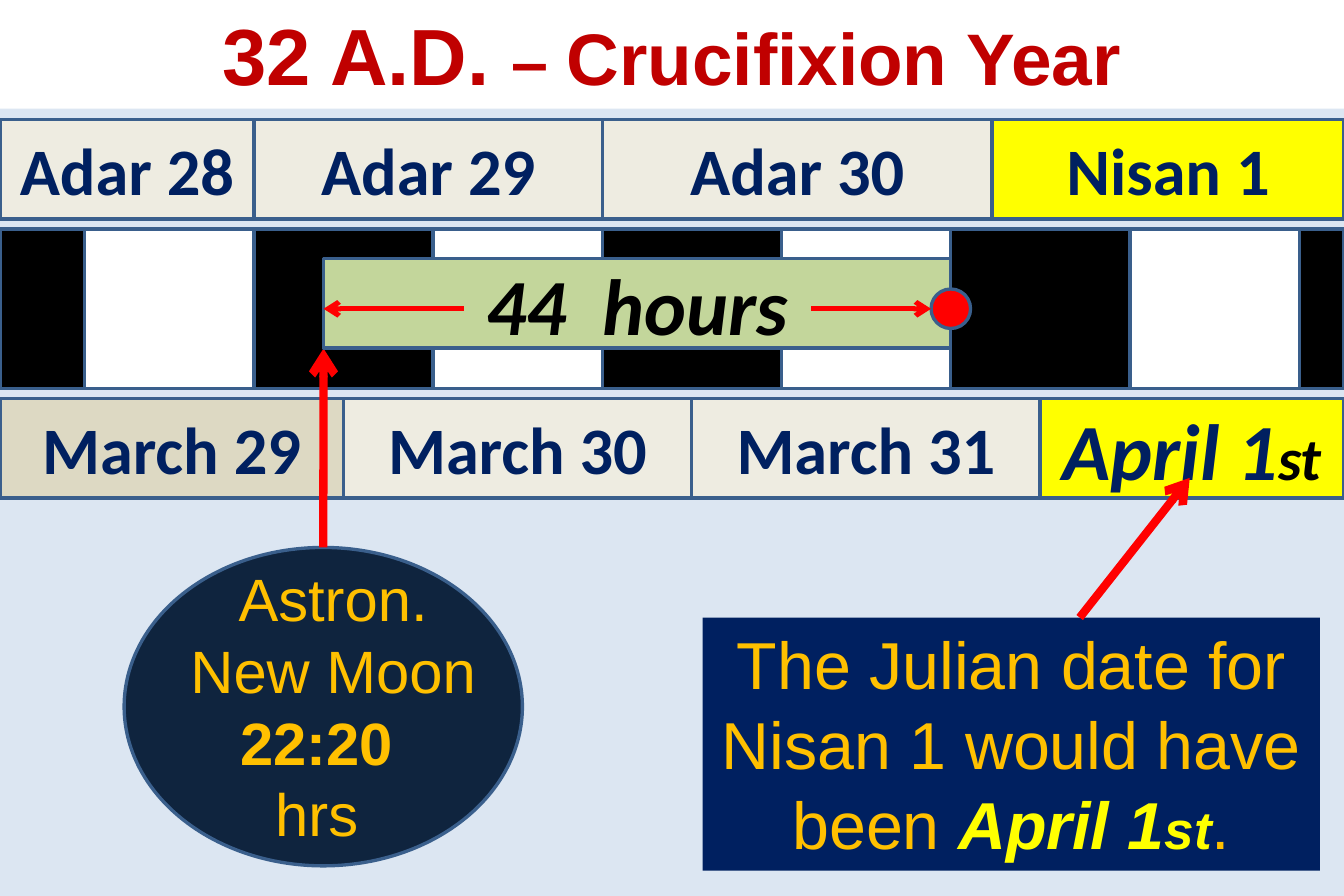
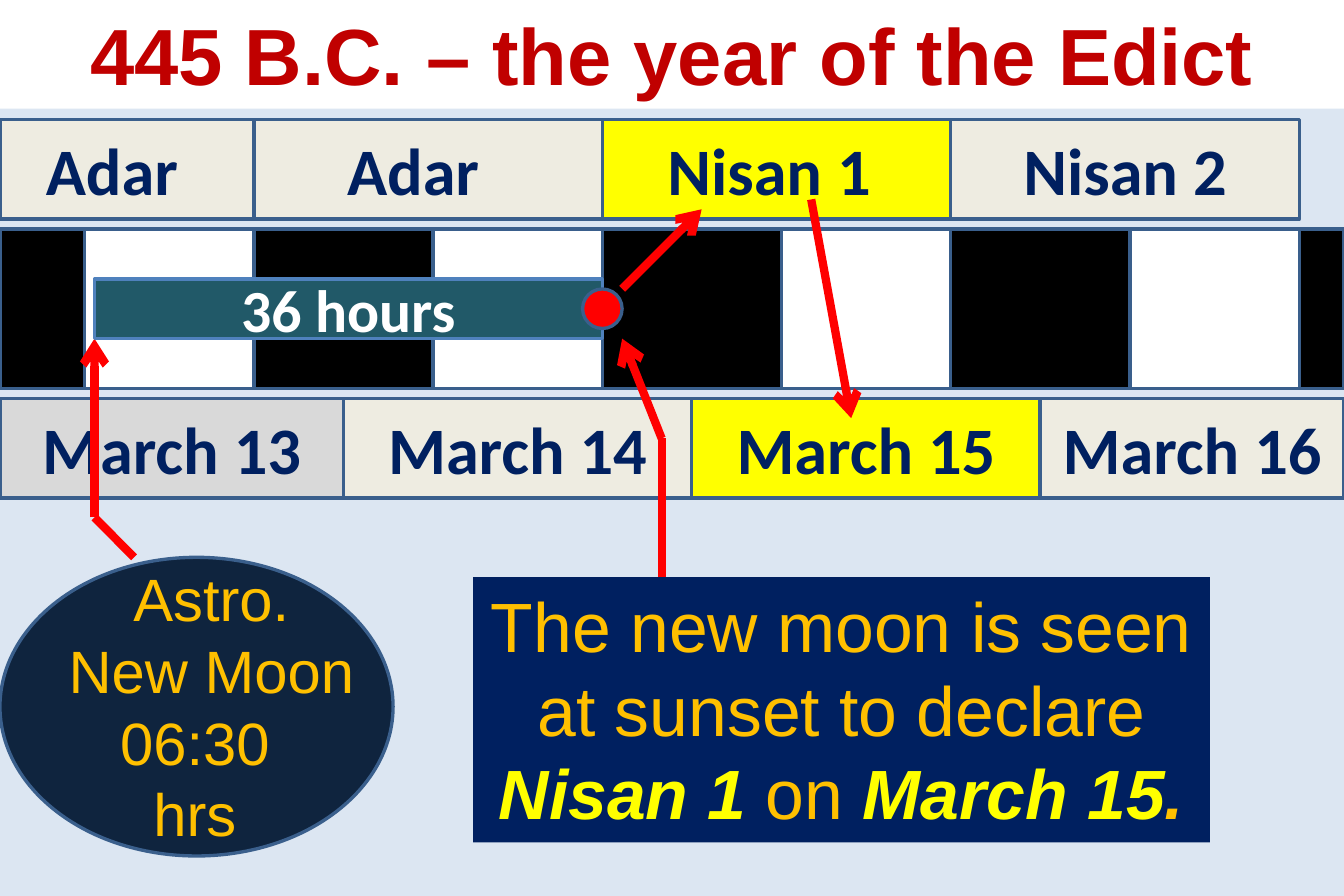
from collections import namedtuple
from itertools import pairwise

from lxml.etree import SubElement
from pptx import Presentation
from pptx.dml.color import RGBColor
from pptx.enum.shapes import MSO_CONNECTOR as Link, MSO_SHAPE as Preset
from pptx.enum.text import MSO_ANCHOR as Anchor, PP_ALIGN as Align
from pptx.oxml.ns import qn
from pptx.util import Cm, Pt

# Shared colours
SKY = RGBColor(0xDC, 0xE6, 0xF2)
WHITE = RGBColor(0xFF, 0xFF, 0xFF)
BLACK = RGBColor(0, 0, 0)
OUTLINE = RGBColor(0x3A, 0x5F, 0x8C)
BLUE = RGBColor(0x4F, 0x81, 0xBD)
IVORY = RGBColor(0xEE, 0xEC, 0xE1)
SAND = RGBColor(0xDD, 0xD9, 0xC3)
GREY = RGBColor(0xD9, 0xD9, 0xD9)
YELLOW = RGBColor(0xFF, 0xFF, 0)
NAVY = RGBColor(0, 0x20, 0x60)
NIGHT_BLUE = RGBColor(0x0F, 0x24, 0x3E)
GOLD = RGBColor(0xFF, 0xC0, 0)
CRIMSON = RGBColor(0xC0, 0, 0)
RED = RGBColor(0xFF, 0, 0)
GREEN = RGBColor(0xC3, 0xD6, 0x9B)
TEAL = RGBColor(0x21, 0x59, 0x68)

Box = namedtuple("Box", "left top width height")
Span = namedtuple("Span", "text size color font bold italic",
                  defaults=("Arial", False, False))
Para = namedtuple("Para", "spans right_margin", defaults=(0,))
Day = namedtuple("Day", "spans fill right_margin", defaults=(IVORY, 0))

# Shared measures, in centimetres
PAGE_WIDTH, PAGE_HEIGHT = 28.58, 19.05
DAY, NIGHT = 7.41, 3.81
SUNSETS = [5.4 + DAY * count for count in range(4)]
MIDNIGHTS = [7.3 + DAY * count for count in range(3)]
TITLE_BOX = Box(0, 0, PAGE_WIDTH, 2.31)
HEBREW_ROW = Box(0, 2.54, PAGE_WIDTH, 2.12)
LIGHT_ROW = Box(0, 4.87, PAGE_WIDTH, 3.39)
JULIAN_ROW = Box(0, 8.47, PAGE_WIDTH, 2.12)
MIDDLE = LIGHT_ROW.top + LIGHT_ROW.height / 2
DOT_SIZE = 0.84


def write(shape, paras, anchor=Anchor.MIDDLE):
    frame = shape.text_frame
    frame.word_wrap = True
    frame.vertical_anchor = anchor
    for index, content in enumerate(paras):
        para = frame.add_paragraph() if index else frame.paragraphs[0]
        para.alignment = Align.CENTER
        if content.right_margin:
            para._p.get_or_add_pPr().set("marR", str(Cm(content.right_margin)))
        for span in content.spans:
            run = para.add_run()
            run.text = span.text
            font = run.font
            font.name, font.size = span.font, Pt(span.size)
            font.bold, font.italic = span.bold, span.italic
            font.color.rgb = span.color


def add_block(page, box, fill, line=OUTLINE, preset=Preset.RECTANGLE):
    block = page.shapes.add_shape(preset, *map(Cm, box))
    block.shadow.inherit = False
    block.fill.solid()
    block.fill.fore_color.rgb = fill
    if line is None:
        block.line.fill.background()
    else:
        block.line.color.rgb = line
        block.line.width = Pt(2)
    return block


def add_arrow(page, *points, width=5, source=None):
    """Draw a red line through the points, with a head at the last one."""
    for start, end in pairwise(points):
        line = page.shapes.add_connector(Link.STRAIGHT, *map(Cm, start + end))
        line.line.color.rgb = RED
        line.line.width = Pt(width)
        if source is not None and start == points[0]:
            line.begin_connect(source, 0)
        properties = line._element.spPr
        if end == points[-1]:
            SubElement(properties.find(qn("a:ln")), qn("a:tailEnd"), type="arrow")
        SubElement(properties, qn("a:effectLst"))


def add_title(page, box, spans):
    write(add_block(page, box, WHITE, None), [Para(spans)], Anchor.TOP)


def add_days(page, row, edges, days):
    """Fill a row with one cell per day, parted at the given edges."""
    for (left, right), day in zip(pairwise([0, *edges, row.width]), days):
        cell = Box(row.left + left, row.top, right - left, row.height)
        write(add_block(page, cell, day.fill),
              [Para(day.spans, day.right_margin)])


def add_light(page, row):
    """Alternate nights and days, each night starting at sunset."""
    edges = [0, SUNSETS[0] - DAY + NIGHT]
    for sunset in SUNSETS:
        edges += [sunset, sunset + NIGHT]
    edges = [edge for edge in edges if edge < row.width] + [row.width]
    for index, (left, right) in enumerate(pairwise(edges)):
        cell = Box(row.left + left, row.top, right - left, row.height)
        add_block(page, cell, WHITE if index % 2 else BLACK)


def add_moon(page, box, overhang, name, time, bold):
    """Place the new moon oval with its label, which is wider than the oval."""
    oval = add_block(page, box, NIGHT_BLUE, preset=Preset.OVAL)
    height = 6.4
    label = page.shapes.add_textbox(
        Cm(box.left), Cm(box.top + (box.height - height) / 2),
        Cm(box.width + overhang), Cm(height))
    write(label, [Para([Span(name, 36, GOLD)]),
                  Para([Span("New Moon", 36, GOLD)]),
                  Para([Span(time, 36, GOLD, bold=bold)], 0.7),
                  Para([Span("hrs", 36, GOLD)])], Anchor.TOP)
    return oval


def add_card(page, box, spans):
    write(add_block(page, box, NAVY, None), [Para(spans)], Anchor.TOP)


def add_duration(page, box, fill, line, span):
    """Place the span of hours and the sunset dot at its right end."""
    write(add_block(page, box, fill, line), [Para([span])])
    dot = Box(box.left + box.width - DOT_SIZE / 2, MIDDLE - DOT_SIZE / 2,
              DOT_SIZE, DOT_SIZE)
    add_block(page, dot, RED, preset=Preset.OVAL)


def day(text, fill=IVORY, right_margin=0):
    return Day([Span(text, 40, NAVY, "Calibri", True)], fill, right_margin)


def add_page(deck, title, hebrew_edges, hebrew_days, julian_days):
    page = deck.slides.add_slide(deck.slide_layouts[6])
    page.background.fill.solid()
    page.background.fill.fore_color.rgb = SKY
    add_title(page, TITLE_BOX, title)
    add_days(page, HEBREW_ROW, hebrew_edges, hebrew_days)
    add_light(page, LIGHT_ROW)
    add_days(page, JULIAN_ROW, MIDNIGHTS, julian_days)
    return page


def build_crucifixion(deck):
    april = Day([Span("April 1", 48, NAVY, "Calibri", True, True),
                 Span("st", 36, BLACK, "Calibri", True, True)], YELLOW)
    page = add_page(
        deck,
        [Span("32 A.D. ", 48, CRIMSON, bold=True),
         Span("– ", 40, CRIMSON, bold=True),
         Span("Crucifixion Year", 44, CRIMSON, bold=True)],
        [*SUNSETS[:2], 21.1],
        [day("Adar 28"), day("Adar 29"), day("Adar 30"), day("Nisan 1", YELLOW)],
        [day("March 29", SAND), day("March 30"), day("March 31"), april])

    # Notes below the calendar
    oval = add_moon(page, Box(2.64, 11.64, 8.47, 6.77), 0.42,
                    "Astron.", "22:20", True)
    add_card(page, Box(14.94, 13.13, 13.13, 5.38), [
        Span("The Julian date for Nisan 1 would have been ", 40, GOLD),
        Span("April 1", 40, YELLOW, bold=True, italic=True),
        Span("st", 32, YELLOW, bold=True, italic=True),
        Span(".", 40, GOLD)])

    # Hours from new moon to sunset
    start, sunset = 6.88, SUNSETS[2]
    add_arrow(page, (start, 11.64), (start, 7.41), source=oval)
    add_duration(page, Box(start, 5.5, sunset - start, 1.9), GREEN, OUTLINE,
                 Span("44  hours", 48, BLACK, "Calibri", True, True))
    add_arrow(page, (9.86, MIDDLE), (start, MIDDLE), width=3)
    add_arrow(page, (17.25, MIDDLE), (sunset - DOT_SIZE / 2, MIDDLE), width=3)
    add_arrow(page, (22.96, 13.13), (25.3, 10.16))


def build_edict(deck):
    page = add_page(
        deck,
        [Span("445 B.C. – the year of the Edict", 48, CRIMSON, bold=True)],
        SUNSETS,
        [day("Adar", right_margin=0.64), day("Adar", right_margin=0.64),
         day("Nisan 1", YELLOW, 0.32), day("Nisan 2")],
        [day("March 13", GREY), day("March 14"), day("March 15", YELLOW),
         day("March 16")])

    # Notes below the calendar
    add_moon(page, Box(0, 11.85, 8.36, 6.35), 0.63, "Astro.", "06:30", False)
    add_card(page, Box(10.06, 12.27, 15.67, 5.64), [
        Span("The new moon is seen at sunset to declare ", 42, GOLD),
        Span("Nisan 1", 42, YELLOW, bold=True, italic=True),
        Span(" on ", 42, GOLD),
        Span("March 15", 42, YELLOW, bold=True, italic=True),
        Span(".", 42, GOLD, bold=True, italic=True)])

    # Hours from new moon to sunset
    start, sunset = 2.01, SUNSETS[1]
    add_arrow(page, (2.85, 11.85), (start, 11), (start, 7.2))
    add_arrow(page, (14.07, 12.27), (14.07, 9.32), (13.23, 7.2))
    add_duration(page, Box(start, 5.93, sunset - start, 1.27), TEAL, BLUE,
                 Span("36 hours", 36, WHITE, "Calibri", True))
    add_arrow(page, (13.23, 6.14), (14.92, 4.45))
    add_arrow(page, (17.25, 4.24), (18.1, 8.89))


def main():
    deck = Presentation()
    deck.slide_width, deck.slide_height = Cm(PAGE_WIDTH), Cm(PAGE_HEIGHT)
    build_crucifixion(deck)
    build_edict(deck)
    deck.save("out.pptx")


if __name__ == "__main__":
    main()
